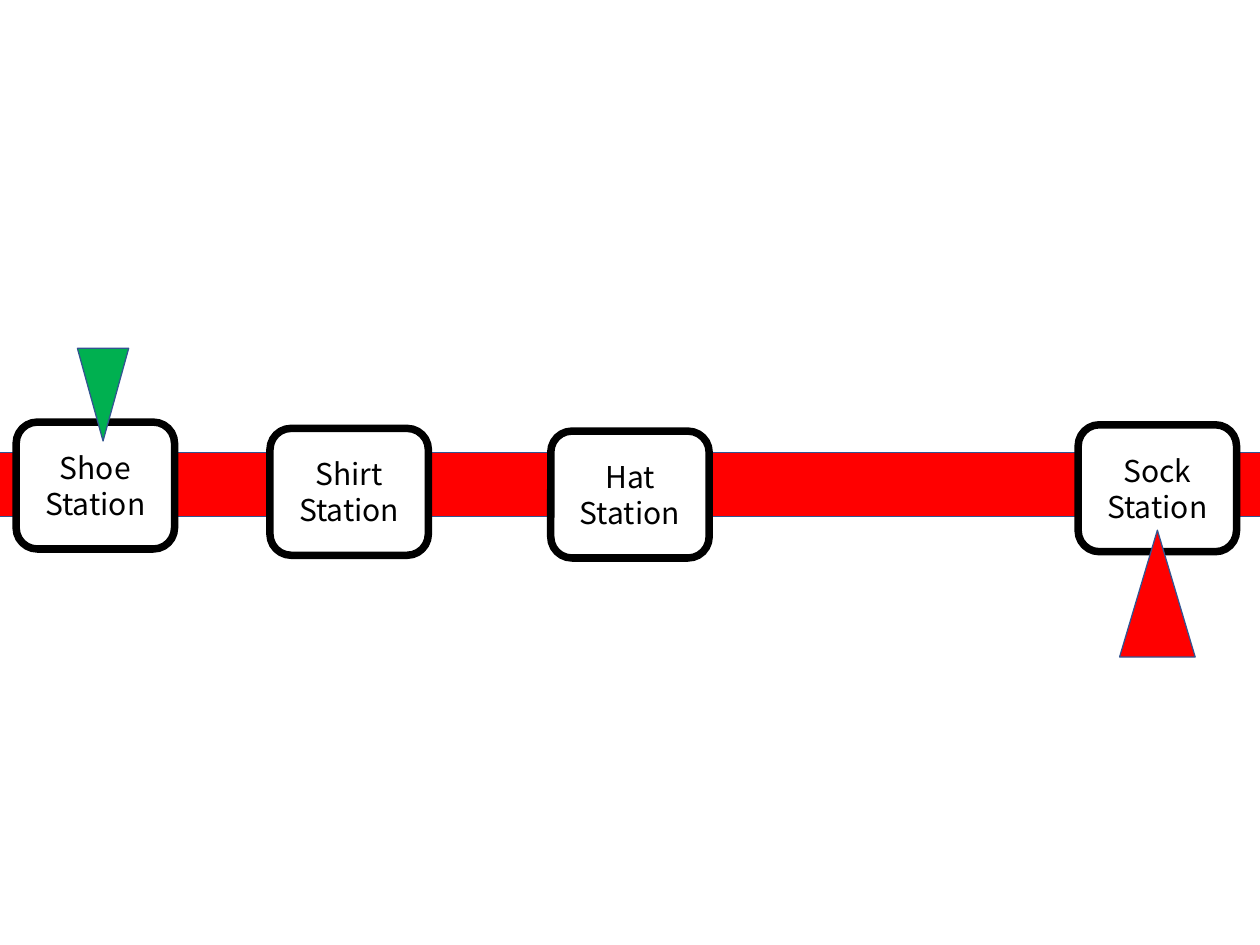
import pptx
import pptx.util
import pptx.dml.color
import pptx.enum.shapes
import pptx.enum.text

Inches = pptx.util.Inches
Pt = pptx.util.Pt
SHAPES = pptx.enum.shapes.MSO_SHAPE

FONT = "Noto Sans CJK JP"
RED, GREEN, WHITE, BLACK, EDGE = "FF0000", "00B050", "FFFFFF", "000000", "325491"
STATION_WIDTH, STATION_HEIGHT = 1.76, 1.41
STATIONS = [
    ("Shoe", 0.18, 4.69),
    ("Shirt", 3, 4.76),
    ("Hat", 6.12, 4.79),
    ("Sock", 11.98, 4.72),
]


def color(value):
    """Turn a hex string into a colour."""
    return pptx.dml.color.RGBColor.from_string(value)


def add_block(page, kind, left, top, width, height, fill, line=EDGE, weight=1):
    """Add a filled and outlined preset shape."""
    block = page.shapes.add_shape(
        kind, Inches(left), Inches(top), Inches(width), Inches(height))
    block.shadow.inherit = False
    block.fill.solid()
    block.fill.fore_color.rgb = color(fill)
    block.line.color.rgb = color(line)
    block.line.width = Pt(weight)
    return block


def add_station(page, name, left, top):
    """Add a rounded station box with its two-line name."""
    box = add_block(page, SHAPES.ROUNDED_RECTANGLE, left, top,
                    STATION_WIDTH, STATION_HEIGHT, WHITE, BLACK, 6)
    frame = box.text_frame
    frame.word_wrap = True
    frame.vertical_anchor = pptx.enum.text.MSO_ANCHOR.MIDDLE
    frame.text = f"{name}\nStation"
    for para in frame.paragraphs:
        para.alignment = pptx.enum.text.PP_ALIGN.CENTER
        para.line_spacing = Pt(28.8)
        para.font.name = FONT
        para.font.size = Pt(24)
        para.font.color.rgb = color(BLACK)


def main():
    """Build the station line slide."""
    deck = pptx.Presentation()
    deck.slide_width = Inches(14)
    deck.slide_height = Inches(10.5)
    page = deck.slides.add_slide(deck.slide_layouts[6])

    add_block(page, SHAPES.RECTANGLE, -1.76, 5.03, 17.22, 0.71, RED)
    for name, left, top in STATIONS:
        add_station(page, name, left, top)
    add_block(page, SHAPES.ISOSCELES_TRIANGLE, 12.44, 5.89, 0.84, 1.41, RED)
    start_marker = add_block(
        page, SHAPES.ISOSCELES_TRIANGLE, 0.86, 3.87, 0.57, 1.03, GREEN)
    start_marker.rotation = 180

    deck.save("out.pptx")


if __name__ == "__main__":
    main()
